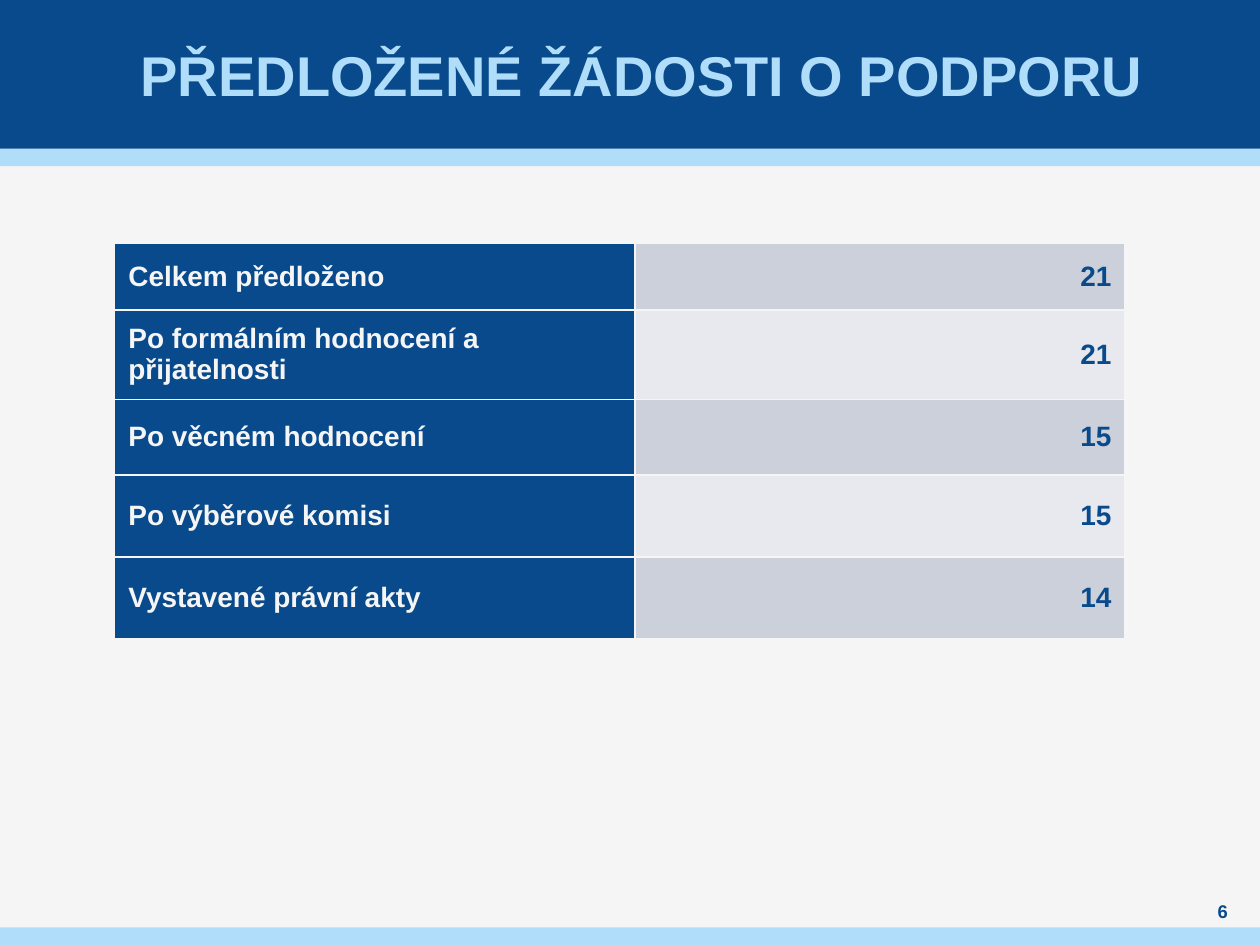
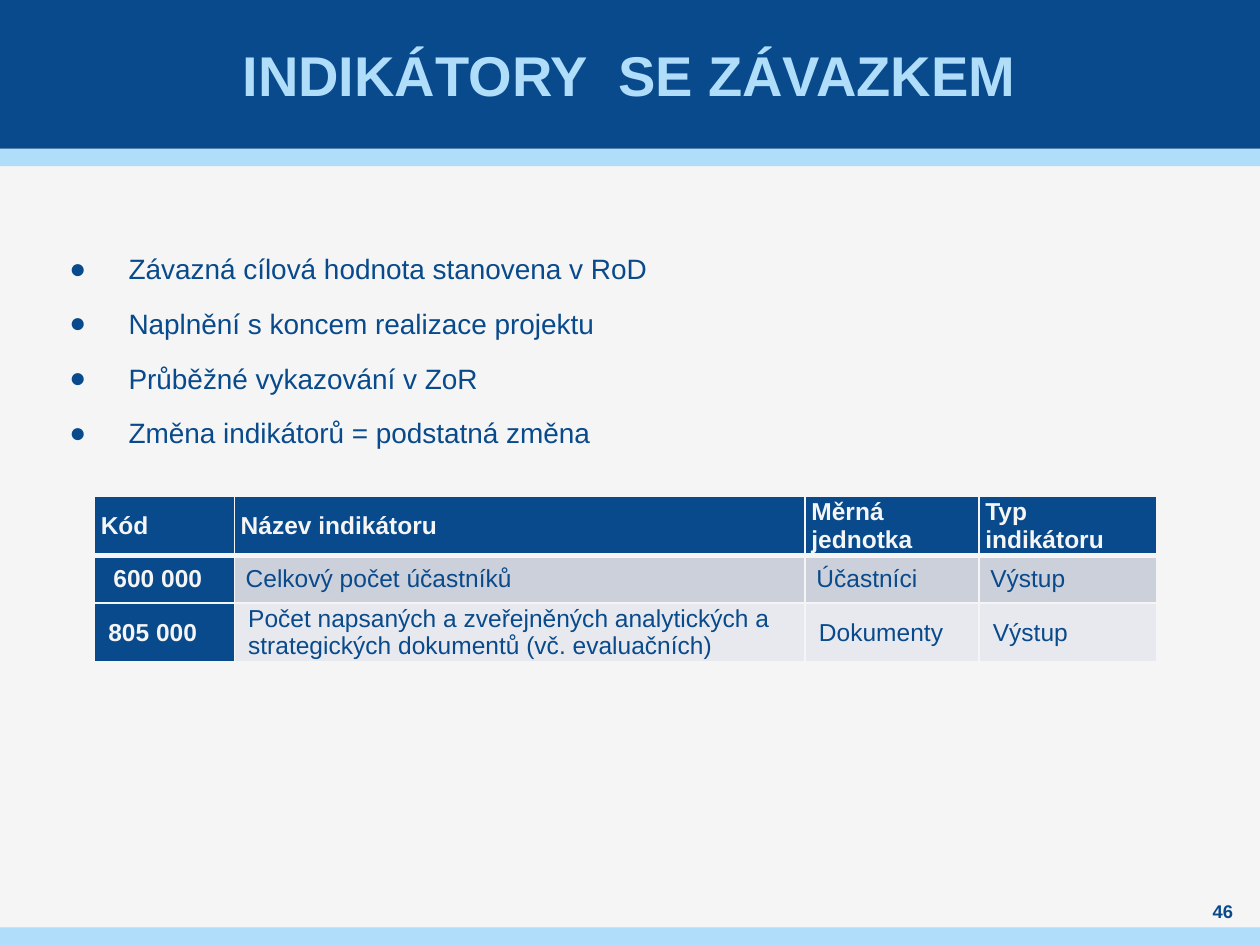
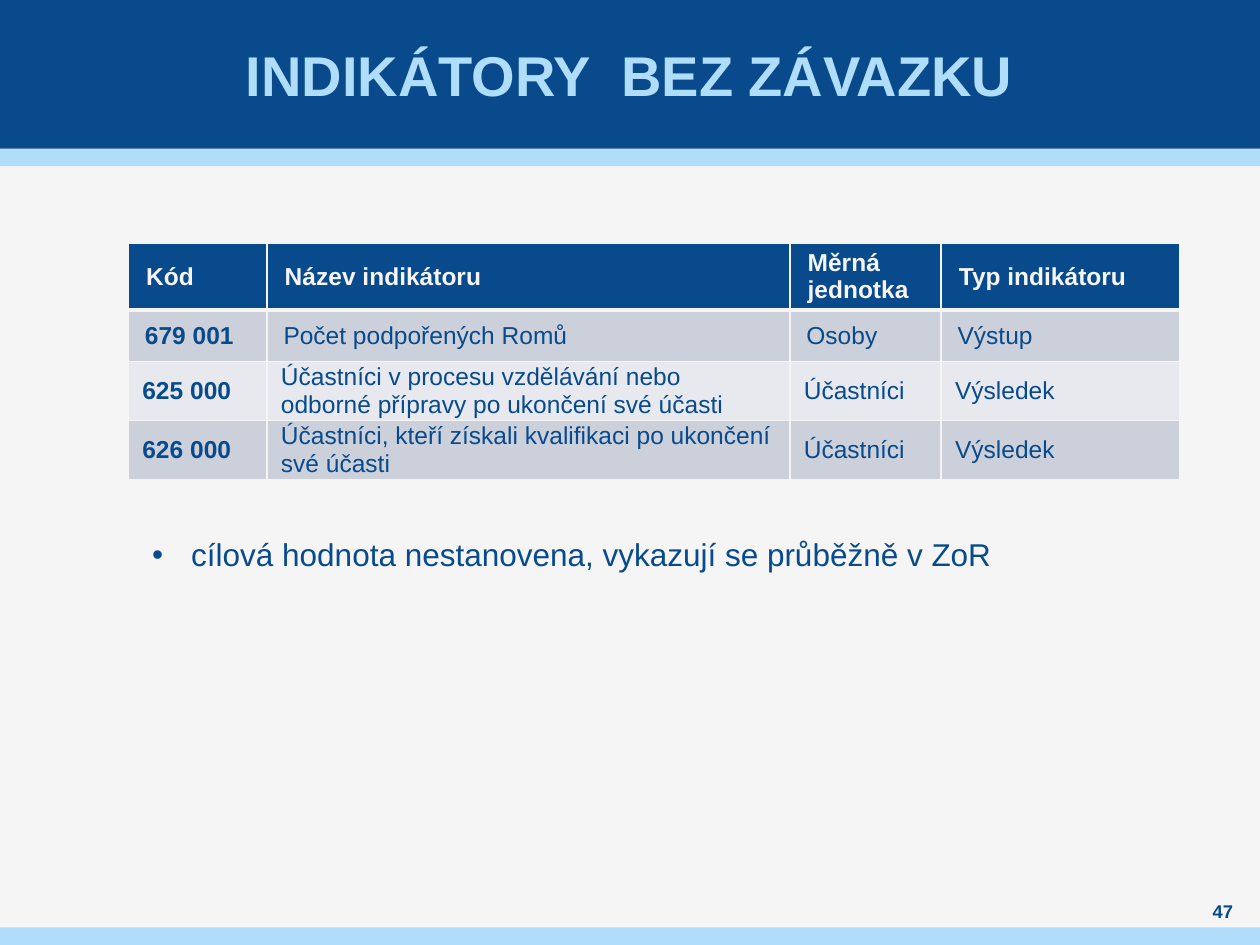
from dataclasses import dataclass
from typing import Any, Optional

from lxml.etree import SubElement
from pptx import Presentation
from pptx.dml.color import RGBColor
from pptx.enum.shapes import MSO_SHAPE
from pptx.enum.text import MSO_ANCHOR, PP_ALIGN
from pptx.oxml.ns import qn
from pptx.util import Inches, Pt

NAVY = RGBColor(0x08, 0x4A, 0x8B)
SKY = RGBColor(0xAF, 0xDD, 0xFA)
PAPER = RGBColor(0xF5, 0xF5, 0xF5)
DARK_ROW = RGBColor(0xCC, 0xD0, 0xDA)
LIGHT_ROW = RGBColor(0xE7, 0xE9, 0xEE)

WIDTH, HEIGHT = 10, 7.5
HEAD_H, STRIPE_H = 1.18, 0.14

TITLE = {"size": Pt(32), "bold": True, "color": SKY}
NUMBER = {"size": Pt(10.5), "bold": True, "color": NAVY}


@dataclass(frozen=True)
class Box:
    left: float
    top: float
    width: float
    height: float

    def lengths(self) -> list[int]:
        """Return the four sides as lengths."""
        return [Inches(v) for v in (self.left, self.top, self.width, self.height)]


@dataclass(frozen=True)
class Band:
    box: Box
    color: RGBColor


@dataclass(frozen=True)
class Row:
    height: float
    cells: tuple[str, ...]
    inset: float = 0.11
    first_inset: Optional[float] = None


@dataclass(frozen=True)
class Grid:
    left: float
    top: float
    widths: tuple[float, ...]
    rows: tuple[Row, ...]
    size: float = 14
    header: bool = True
    navy_codes: bool = False
    bold_cols: int = 1
    right_col: Optional[int] = None


@dataclass(frozen=True)
class BulletList:
    box: Box
    items: tuple[str, ...]
    size: float
    char: str
    hang: float
    insets: tuple[float, float, float, float]
    gap: float = 0


@dataclass(frozen=True)
class Page:
    title: str
    number: int
    grid: Grid
    bullets: Optional[BulletList] = None
    title_width: float = 9.21


BANDS = (
    Band(Box(0, HEAD_H, WIDTH, STRIPE_H), SKY),
    Band(Box(0, 0, WIDTH, HEAD_H), NAVY),
    Band(Box(0, HEIGHT - STRIPE_H, WIDTH, STRIPE_H), SKY),
)

HEADINGS = ("Kód", "Název indikátoru", "Měrná jednotka", "Typ indikátoru")

PAGES = (
    Page(
        "PŘEDLOŽENÉ ŽÁDOSTI O PODPORU", 6,
        Grid(0.91, 1.93, (4.13, 3.89), (
            Row(0.53, ("Celkem předloženo", "21")),
            Row(0.71, ("Po formálním hodnocení a přijatelnosti", "21")),
            Row(0.6, ("Po věcném hodnocení", "15")),
            Row(0.65, ("Po výběrové komisi", "15")),
            Row(0.65, ("Vystavené právní akty", "14")),
        ), size=16, header=False, navy_codes=True, bold_cols=2, right_col=1),
        title_width=9.41,
    ),
    Page(
        "INDIKÁTORY  SE ZÁVAZKEM", 46,
        Grid(0.75, 3.94, (1.11, 4.53, 1.38, 1.41), (
            Row(0.43, HEADINGS, inset=0.05),
            Row(0.38, ("600 000", "Celkový počet účastníků", "Účastníci", "Výstup"),
                inset=0.09, first_inset=0.15),
            Row(0.44, ("805 000",
                       "Počet napsaných a zveřejněných analytických a "
                       "strategických dokumentů (vč. evaluačních)",
                       "Dokumenty", "Výstup")),
        ), navy_codes=True),
        BulletList(Box(0.55, 1.55, 8.82, 4.72), (
            "Závazná cílová hodnota stanovena v RoD",
            "Naplnění s koncem realizace projektu",
            "Průběžné vykazování v ZoR",
            "Změna indikátorů = podstatná změna",
        ), 16, "●", 0.47, (0, 0.45, 0, 0), gap=12),
    ),
    Page(
        "INDIKÁTORY  BEZ ZÁVAZKU", 47,
        Grid(1.02, 1.93, (1.1, 4.15, 1.2, 1.89), (
            Row(0.53, HEADINGS, inset=0.14),
            Row(0.41, ("679 001", "Počet podpořených Romů", "Osoby", "Výstup"),
                inset=0.13),
            Row(0.44, ("625 000",
                       "Účastníci v procesu vzdělávání nebo odborné přípravy "
                       "po ukončení své účasti",
                       "Účastníci", "Výsledek")),
            Row(0.44, ("626 000",
                       "Účastníci, kteří získali kvalifikaci po ukončení své účasti",
                       "Účastníci", "Výsledek")),
        )),
        BulletList(Box(1.11, 4.2, 8.26, 0.71),
                   ("cílová hodnota nestanovena, vykazují se průběžně v ZoR",),
                   18, "•", 0.31, (0.1, 0.05, 0.1, 0.05)),
    ),
)


def set_attrs(obj: Any, values: dict[str, Any]) -> None:
    """Set every named attribute of an object."""
    for name, value in values.items():
        setattr(obj, name, value)


def margins(left: float, top: float, right: float, bottom: float) -> dict[str, Any]:
    """Return margin settings for a text frame or a cell."""
    return {"margin_left": Inches(left), "margin_top": Inches(top),
            "margin_right": Inches(right), "margin_bottom": Inches(bottom)}


def write(p: Any, text: str, style: dict[str, Any]) -> None:
    """Add one formatted run to a paragraph."""
    r = p.add_run()
    r.text = text
    r.font.name = "Arial"
    set_attrs(r.font, {k: v for k, v in style.items() if k != "color"})
    r.font.color.rgb = style["color"]


def add_band(s: Any, band: Band) -> None:
    """Draw a plain coloured rectangle."""
    sp = s.shapes.add_shape(MSO_SHAPE.RECTANGLE, *band.box.lengths())
    sp.shadow.inherit = False
    sp.fill.solid()
    sp.fill.fore_color.rgb = band.color
    sp.line.fill.background()


def add_label(s: Any, box: Box, text: str, style: dict[str, Any], side: float = 0) -> None:
    """Add a centred line of text."""
    tf = s.shapes.add_textbox(*box.lengths()).text_frame
    set_attrs(tf, {"word_wrap": True, "vertical_anchor": MSO_ANCHOR.MIDDLE,
                   **margins(side, 0, side, 0)})
    p = tf.paragraphs[0]
    p.alignment = PP_ALIGN.CENTER
    write(p, text, style)


def add_bullets(s: Any, bullets: BulletList) -> None:
    """Add a list with hanging bullets."""
    tf = s.shapes.add_textbox(*bullets.box.lengths()).text_frame
    set_attrs(tf, {"word_wrap": True, **margins(*bullets.insets)})
    for i, item in enumerate(bullets.items):
        p = tf.add_paragraph() if i else tf.paragraphs[0]
        p.space_after = Pt(bullets.gap)
        pPr = p._p.get_or_add_pPr()
        pPr.set("marL", str(Inches(bullets.hang)))
        pPr.set("indent", str(-Inches(bullets.hang)))
        SubElement(pPr, qn("a:buFont"), typeface="Arial")
        SubElement(pPr, qn("a:buChar"), char=bullets.char)
        write(p, item, {"size": Pt(bullets.size), "color": NAVY})


def set_borders(cell: Any, top: float, bottom: float) -> None:
    """Draw the light lines around a cell."""
    tcPr = cell._tc.get_or_add_tcPr()
    for i, (tag, width) in enumerate((("lnL", 1), ("lnR", 1), ("lnT", top), ("lnB", bottom))):
        ln = SubElement(tcPr, qn(f"a:{tag}"), w=str(Pt(width)))
        SubElement(SubElement(ln, qn("a:solidFill")), qn("a:srgbClr"), val=str(PAPER))
        tcPr.insert(i, ln)


def add_grid(s: Any, grid: Grid) -> None:
    """Add a table with navy headings and banded rows."""
    box = Box(grid.left, grid.top, sum(grid.widths), sum(row.height for row in grid.rows))
    table = s.shapes.add_table(len(grid.rows), len(grid.widths), *box.lengths()).table
    set_attrs(table, {"first_row": False, "horz_banding": False})
    for column, width in zip(table.columns, grid.widths):
        column.width = Inches(width)
    for i, row in enumerate(grid.rows):
        table.rows[i].height = Inches(row.height)
        is_head = grid.header and i == 0
        band = LIGHT_ROW if (i - grid.header) % 2 else DARK_ROW
        for j, text in enumerate(row.cells):
            cell = table.cell(i, j)
            navy = is_head or (grid.navy_codes and j == 0)
            inset = row.first_inset if j == 0 and row.first_inset else row.inset
            set_attrs(cell, {"vertical_anchor": MSO_ANCHOR.MIDDLE,
                             **margins(inset, 0, inset, 0)})
            cell.fill.solid()
            cell.fill.fore_color.rgb = NAVY if navy else band
            set_borders(cell, 3 if grid.header and i == 1 else 1, 3 if is_head else 1)
            p = cell.text_frame.paragraphs[0]
            p.alignment = PP_ALIGN.RIGHT if j == grid.right_col else PP_ALIGN.LEFT
            write(p, text, {"size": Pt(grid.size), "bold": is_head or j < grid.bold_cols,
                            "color": PAPER if navy else NAVY})


def add_page(prs: Any, page: Page) -> None:
    """Build one slide."""
    s = prs.slides.add_slide(prs.slide_layouts[6])
    s.background.fill.solid()
    s.background.fill.fore_color.rgb = PAPER
    for band in BANDS:
        add_band(s, band)
    add_label(s, Box(0.39, 0, page.title_width, HEAD_H), page.title, TITLE, 0.04)
    if page.bullets:
        add_bullets(s, page.bullets)
    add_label(s, Box(9.45, 7.13, 0.51, 0.2), str(page.number), NUMBER)
    add_grid(s, page.grid)


def main() -> None:
    """Build and save the presentation."""
    prs = Presentation()
    set_attrs(prs, {"slide_width": Inches(WIDTH), "slide_height": Inches(HEIGHT)})
    for page in PAGES:
        add_page(prs, page)
    prs.save("out.pptx")


if __name__ == "__main__":
    main()
